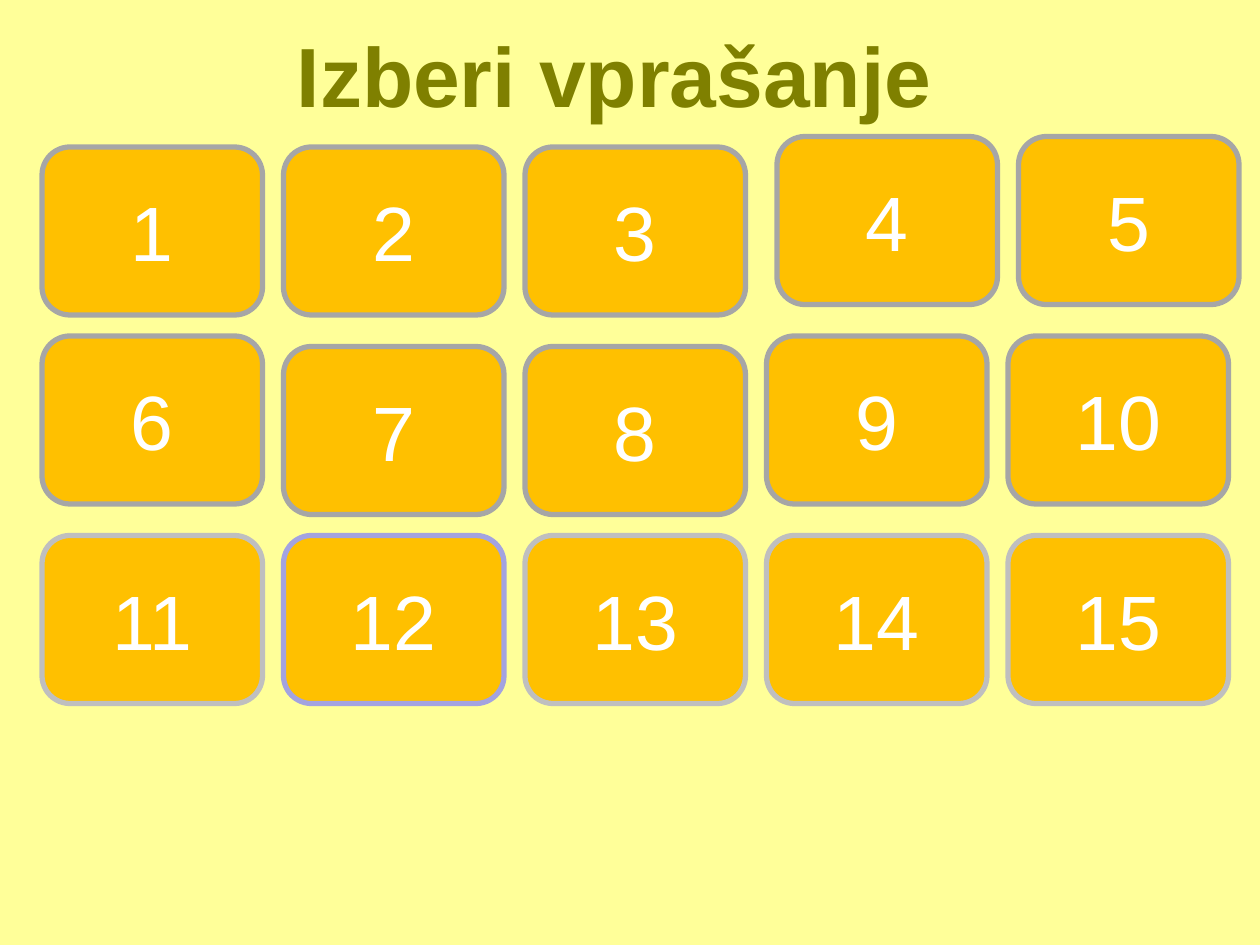
"""Build the question board slide with fifteen numbered tiles."""
from dataclasses import dataclass
from typing import Any

from pptx import Presentation
from pptx.dml.color import RGBColor
from pptx.enum.shapes import MSO_SHAPE as Shape
from pptx.enum.text import MSO_ANCHOR as Anchor, MSO_AUTO_SIZE as AutoSize, PP_ALIGN as Align
from pptx.util import Emu, Pt

EMU_PER_PX = 9525
SLIDE_WIDTH, SLIDE_HEIGHT = 960, 720
COLUMNS, TILE_COUNT = 5, 15
BOARD_LEFT, BOARD_TOP = 32, 104
COLUMN_STEP, ROW_STEP = 184, 152
TILE_WIDTH, TILE_HEIGHT = 168, 128
NUDGE = 8
LOWERED = {1, 2, 3, 7, 8}
SHIFTED_RIGHT = {4, 5}
VISITED = {12}

PALE_YELLOW = RGBColor(0xFF, 0xFF, 0x99)
OLIVE = RGBColor(0x7F, 0x80, 0x00)
AMBER = RGBColor(0xFF, 0xC0, 0x00)
WHITE = RGBColor(0xFF, 0xFF, 0xFF)
GRAY = RGBColor(0xA6, 0xA6, 0xA6)
LIGHT_GRAY = RGBColor(0xBF, 0xBF, 0xBF)
LAVENDER = RGBColor(0xA3, 0xA3, 0xE0)

TITLE_FONT = {"name": "Arial", "size": Pt(48), "bold": True}
TILE_FONT = {"name": "Arial", "size": Pt(44), "bold": False}


@dataclass(frozen=True)
class Tile:
    number: int
    left: int
    top: int
    outline: RGBColor


def px(length: int) -> Emu:
    return Emu(length * EMU_PER_PX)


def make_tile(number: int) -> Tile:
    row, column = divmod(number - 1, COLUMNS)
    left = BOARD_LEFT + column * COLUMN_STEP + NUDGE * (number in SHIFTED_RIGHT)
    top = BOARD_TOP + row * ROW_STEP + NUDGE * (number in LOWERED)
    outline = LAVENDER if number in VISITED else LIGHT_GRAY if row == 2 else GRAY
    return Tile(number, left, top, outline)


def write_text(shape: Any, text: str, font_format: dict[str, Any], color: RGBColor, wrap: bool) -> None:
    frame = shape.text_frame
    frame_format = {"text": text, "word_wrap": wrap, "auto_size": AutoSize.NONE,
                    "vertical_anchor": Anchor.MIDDLE}
    for name, value in frame_format.items():
        setattr(frame, name, value)
    paragraph = frame.paragraphs[0]
    paragraph.alignment = Align.CENTER
    font = paragraph.runs[0].font
    for name, value in font_format.items():
        setattr(font, name, value)
    font.color.rgb = color


def format_title(title: Any) -> None:
    bounds = {"left": px(48), "top": px(0), "width": px(840), "height": px(112)}
    for name, value in bounds.items():
        setattr(title, name, value)
    write_text(title, "Izberi vprašanje", TITLE_FONT, OLIVE, True)


def draw_tile(slide: Any, tile: Tile) -> None:
    shape = slide.shapes.add_shape(Shape.ROUNDED_RECTANGLE, px(tile.left), px(tile.top),
                                   px(TILE_WIDTH), px(TILE_HEIGHT))
    shape.shadow.inherit = False
    shape.fill.solid()
    shape.fill.fore_color.rgb = AMBER
    shape.line.color.rgb = tile.outline
    shape.line.width = Pt(3)
    write_text(shape, str(tile.number), TILE_FONT, WHITE, False)


def main() -> None:
    presentation = Presentation()
    presentation.slide_width = px(SLIDE_WIDTH)
    presentation.slide_height = px(SLIDE_HEIGHT)
    slide = presentation.slides.add_slide(presentation.slide_layouts[5])
    slide.background.fill.solid()
    slide.background.fill.fore_color.rgb = PALE_YELLOW
    format_title(slide.shapes.title)
    for number in range(1, TILE_COUNT + 1):
        draw_tile(slide, make_tile(number))
    presentation.save("out.pptx")


if __name__ == "__main__":
    main()
